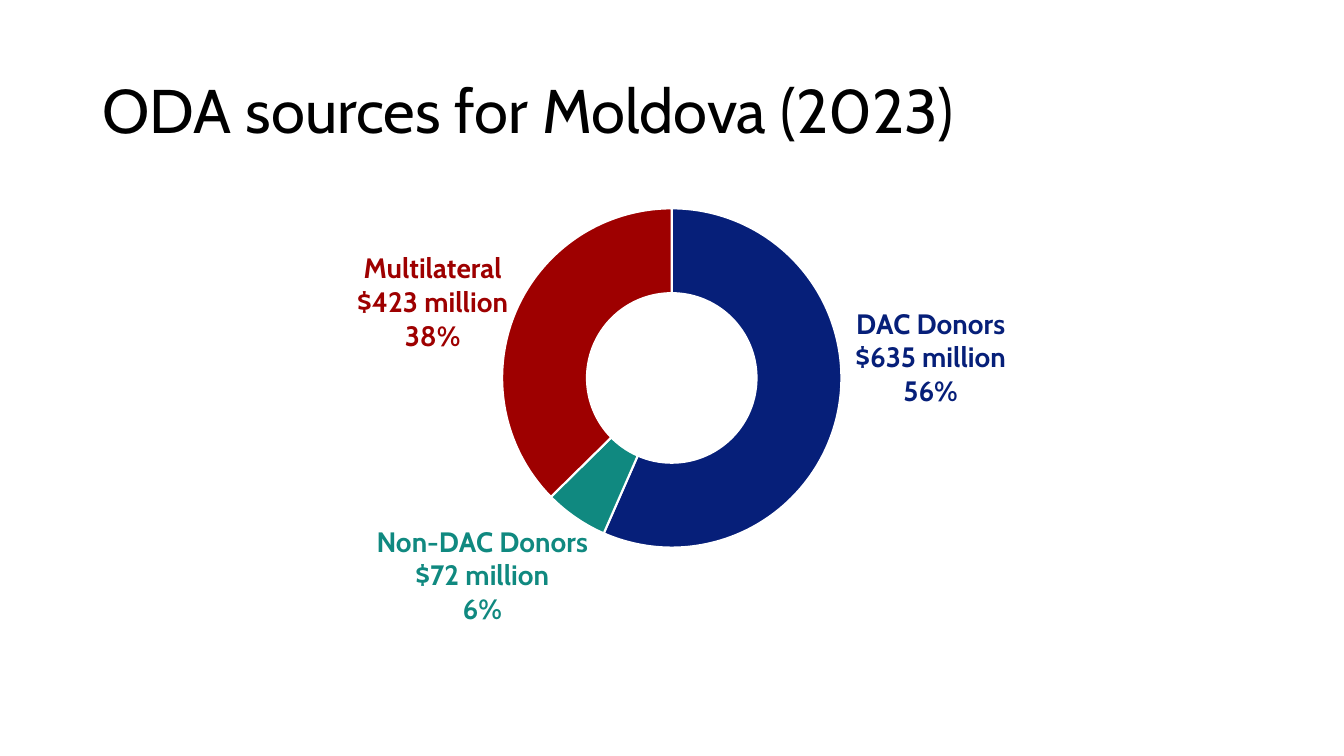
from pptx import Presentation
from pptx.chart.data import CategoryChartData
from pptx.dml.color import RGBColor
from pptx.enum.chart import XL_CHART_TYPE
from pptx.enum.text import MSO_ANCHOR, MSO_AUTO_SIZE, PP_ALIGN
from pptx.util import Cm, Pt

DOUGHNUT = XL_CHART_TYPE.DOUGHNUT
MIDDLE = MSO_ANCHOR.MIDDLE
FIT_SHAPE, NO_FIT = MSO_AUTO_SIZE.SHAPE_TO_FIT_TEXT, MSO_AUTO_SIZE.NONE
LEFT, CENTER = PP_ALIGN.LEFT, PP_ALIGN.CENTER

FONT = "Cabin"
BLACK = RGBColor(0x00, 0x00, 0x00)
WHITE = RGBColor(0xFF, 0xFF, 0xFF)
NAVY = RGBColor(0x06, 0x1F, 0x79)
TEAL = RGBColor(0x10, 0x89, 0x80)
RED = RGBColor(0x9E, 0x00, 0x00)

TITLE_ONLY_LAYOUT = 5
LABEL_WIDTH, LABEL_HEIGHT = Cm(6.07), Cm(2.82)

# Share, colour, label position in centimetres, label lines
SOURCES = [
    (56, NAVY, (20.42, 7.59), ["DAC Donors", "$635 million", "56%"]),
    (6, TEAL, (9.12, 13.08), ["Non-DAC Donors", "$72 million", "6%"]),
    (37, RED, (7.87, 6.2), ["Multilateral", "$423 million", "38%"]),
]


def write_text(text_frame, lines, *, size, color, bold=False, align=LEFT, line_spacing=1.0):
    for index, line in enumerate(lines):
        paragraph = text_frame.paragraphs[0] if index == 0 else text_frame.add_paragraph()
        paragraph.alignment = align
        paragraph.line_spacing = line_spacing
        run = paragraph.add_run()
        run.text = line
        run.font.name = FONT
        run.font.size = Pt(size)
        run.font.bold = bold
        run.font.color.rgb = color


def add_title(slide, text):
    title = slide.shapes.title
    title.left, title.top = Cm(2.33), Cm(1.01)
    title.width, title.height = Cm(29.21), Cm(3.68)
    title.text_frame.vertical_anchor = MIDDLE
    title.text_frame.auto_size = NO_FIT
    write_text(title.text_frame, [text], size=44, color=BLACK, line_spacing=0.9)


def add_doughnut(slide):
    data = CategoryChartData()
    data.categories = [str(number) for number in range(1, len(SOURCES) + 1)]
    data.add_series("Series 1", [share for share, *_ in SOURCES])
    frame = slide.shapes.add_chart(DOUGHNUT, Cm(9.68), Cm(4.9), Cm(14.5), Cm(9.25), data)
    chart = frame.chart
    chart.has_legend = False
    chart.has_title = False
    chart.font.name = FONT
    chart.font.size = Pt(10)
    chart.font.color.rgb = BLACK
    plot = chart.plots[0]
    plot.vary_by_categories = True
    for index, (_, color, *_) in enumerate(SOURCES):
        slice_format = plot.series[0].points[index].format
        slice_format.fill.solid()
        slice_format.fill.fore_color.rgb = color
        slice_format.line.color.rgb = WHITE
        slice_format.line.width = Pt(1.5)


def add_label(slide, lines, position, color):
    left, top = position
    box = slide.shapes.add_textbox(Cm(left), Cm(top), LABEL_WIDTH, LABEL_HEIGHT)
    box.text_frame.word_wrap = True
    box.text_frame.auto_size = FIT_SHAPE
    write_text(box.text_frame, lines, size=20, color=color, bold=True, align=CENTER)


def main():
    presentation = Presentation()
    presentation.slide_width, presentation.slide_height = Cm(33.87), Cm(19.05)
    slide = presentation.slides.add_slide(presentation.slide_layouts[TITLE_ONLY_LAYOUT])
    add_title(slide, "ODA sources for Moldova (2023)")
    add_doughnut(slide)
    for _, color, position, lines in SOURCES:
        add_label(slide, lines, position, color)
    presentation.save("out.pptx")


if __name__ == "__main__":
    main()
